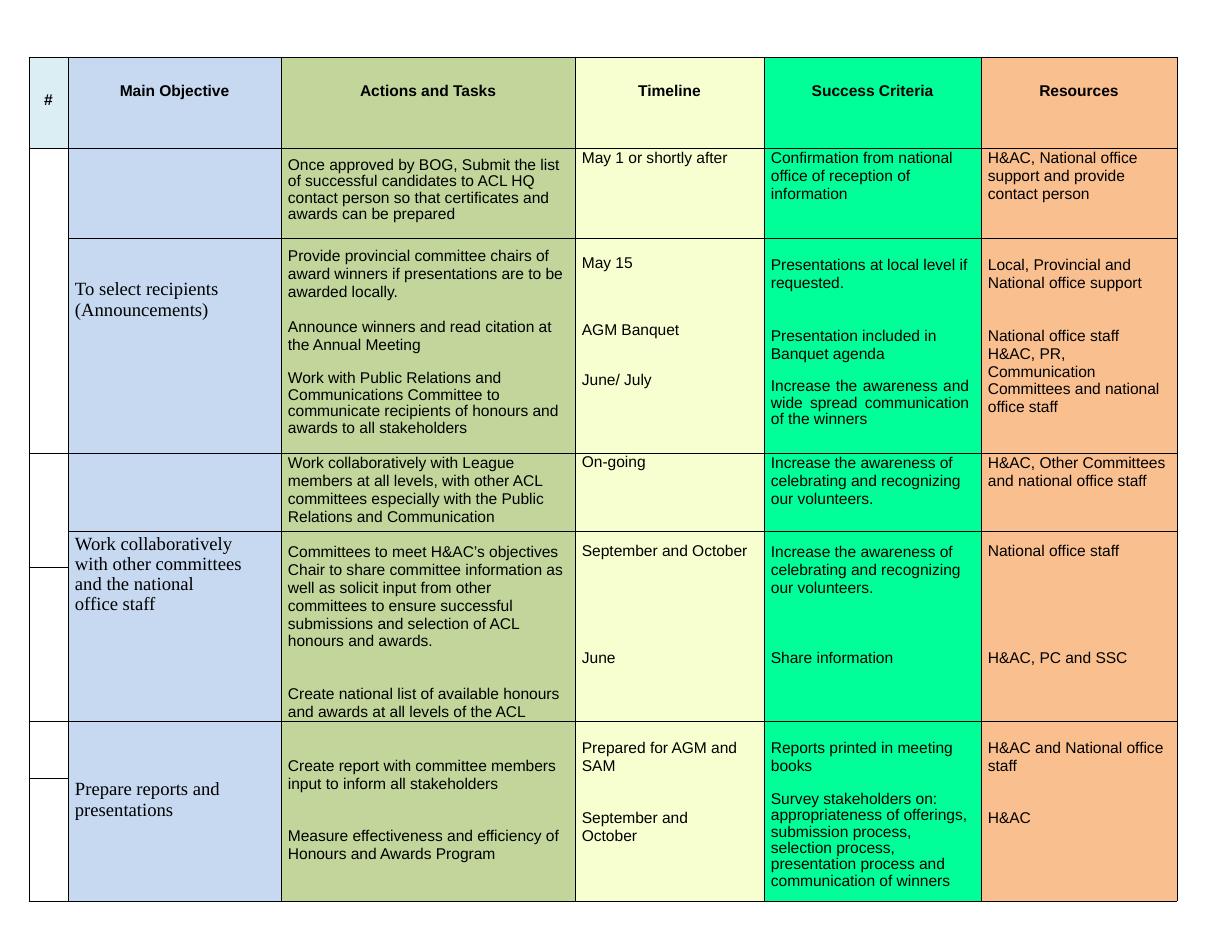
from dataclasses import dataclass
from typing import NamedTuple

from lxml import etree
from pptx import Presentation, util as u
from pptx.dml.color import RGBColor
from pptx.enum import text
from pptx.oxml.ns import qn

PX = u.Inches(1) // 112


def px(length: int) -> u.Emu:
    return u.Emu(length * PX)


@dataclass(frozen=True)
class Theme:
    body_font: str = "Arial"
    objective_font: str = "Times New Roman"
    body_size: float = 10
    objective_size: float = 12
    body_leading: float = 11.5
    objective_leading: float = 13.7
    ink: str = "000000"
    border_width: float = 0.5
    number_head: str = "DAEEF3"


class Column(NamedTuple):
    title: str
    width: int
    fill: str | None
    right: int = 0


class Para(NamedTuple):
    """One paragraph; leading is a share of the line, or None for the fixed one."""
    words: str
    gap: int = 0
    leading: float | None = None
    justified: bool = False


class Entry(NamedTuple):
    row: int
    col: int
    top: int
    paras: tuple[Para, ...]


class Span(NamedTuple):
    row: int
    last_row: int
    cols: tuple[int, ...]


THEME = Theme()
NUMBER, OBJECTIVE, ACTIONS, TIMELINE, CRITERIA, RESOURCES = range(6)
PLAN = tuple(range(OBJECTIVE, RESOURCES + 1))
LEFT, TOP, INDENT = 29, 57, 7
TIGHT = 0.95

COLUMNS = (
    Column("#", 39, None),
    Column("Main Objective", 213, "C6D9F1", 36),
    Column("Actions and Tasks", 294, "C2D69B", 11),
    Column("Timeline", 189, "F7FED0"),
    Column("Success Criteria", 217, "00FF99", 12),
    Column("Resources", 196, "FABF8F", 10),
)
ROW_HEIGHTS = (91, 90, 215, 78, 36, 84, 17, 36, 57, 123)
SPANS = (
    Span(1, 2, (NUMBER,)), Span(3, 4, (NUMBER,)), Span(5, 7, (NUMBER,)),
    Span(4, 5, PLAN), Span(8, 9, PLAN),
)
# Row boundaries inside one objective, drawn only in the number column
OPEN_BOUNDARIES = (6, 7)

AWARENESS = Para("Increase the awareness of celebrating and recognizing our volunteers.")

ENTRIES = (
    Entry(1, ACTIONS, 9, (Para("Once approved by BOG, Submit the list\vof successful candidates to ACL HQ "
                               "contact person so that certificates and awards can be prepared",
                               leading=TIGHT),)),
    Entry(1, TIMELINE, 1, (Para("May 1 or shortly after"),)),
    Entry(1, CRITERIA, 1, (Para("Confirmation from national office of reception of information"),)),
    Entry(1, RESOURCES, 1, (Para("H&AC, National office support and provide contact person"),)),

    Entry(2, OBJECTIVE, 40, (Para("To select recipients (Announcements)"),)),
    Entry(2, ACTIONS, 9, (
        Para("Provide provincial committee chairs of award winners if presentations are to be "
             "awarded locally."),
        Para("Announce winners and read citation at the Annual Meeting", 17),
        Para("Work with Public Relations and Communications Committee to communicate recipients "
             "of honours and awards to all stakeholders", 17, TIGHT))),
    Entry(2, TIMELINE, 16, (Para("May 15"), Para("AGM Banquet", 49), Para("June/ July", 32))),
    Entry(2, CRITERIA, 18, (
        Para("Presentations at local level if requested."),
        Para("Presentation included in Banquet agenda", 35),
        Para("Increase the awareness and wide spread communication of the winners",
             16, TIGHT, True))),
    Entry(2, RESOURCES, 18, (
        Para("Local, Provincial and National office support"),
        Para("National office staff\vH&AC, PR,", 35),
        Para("Communication Committees and national office staff"))),

    Entry(3, ACTIONS, 1, (Para("Work collaboratively with League members at all levels, with other ACL "
                               "committees especially with the Public Relations and Communication"),)),
    Entry(3, TIMELINE, 0, (Para("On-going"),)),
    Entry(3, CRITERIA, 1, (AWARENESS,)),
    Entry(3, RESOURCES, 1, (Para("H&AC, Other Committees and national office staff"),)),

    Entry(4, OBJECTIVE, 4, (Para("Work collaboratively with other committees and the national\voffice staff",
                                 leading=0.96),)),
    Entry(4, ACTIONS, 12, (Para("Committees to meet H&AC’s objectives Chair to share committee information "
                                "as well as solicit input from other committees to ensure successful "
                                "submissions and selection of ACL honours and awards."),)),
    Entry(4, TIMELINE, 11, (Para("September and October"),)),
    Entry(4, CRITERIA, 12, (AWARENESS,)),
    Entry(4, RESOURCES, 11, (Para("National office staff"),)),

    Entry(6, TIMELINE, 0, (Para("June", leading=0.9),)),
    Entry(6, CRITERIA, 0, (Para("Share information", leading=0.9),)),
    Entry(6, RESOURCES, 0, (Para("H&AC, PC and SSC", leading=0.9),)),
    Entry(7, ACTIONS, 0, (Para("Create national list of available honours and awards at all levels "
                               "of the ACL"),)),

    Entry(8, OBJECTIVE, 57, (Para("Prepare reports and presentations"),)),
    Entry(8, ACTIONS, 36, (
        Para("Create report with committee members input to inform all stakeholders"),
        Para("Measure effectiveness and efficiency of Honours and Awards Program", 34))),
    Entry(8, TIMELINE, 18, (Para("Prepared for AGM and SAM"), Para("September and\vOctober", 34))),
    Entry(8, CRITERIA, 18, (
        Para("Reports printed in meeting books"),
        Para("Survey stakeholders on: appropriateness of offerings, submission process, selection "
             "process, presentation process and communication of winners", 16, TIGHT))),
    Entry(8, RESOURCES, 18, (Para("H&AC and National office staff"), Para("H&AC", 34))),
)


def draw_borders(cell, row: int, col: int) -> None:
    """Rule all four edges, leaving out the open boundaries."""
    props = cell._tc.get_or_add_tcPr()
    inside = col != NUMBER
    hidden = {"lnT": inside and row in OPEN_BOUNDARIES,
              "lnB": inside and row + 1 in OPEN_BOUNDARIES}
    for edge in ("lnL", "lnR", "lnT", "lnB"):
        line = etree.SubElement(props, qn(f"a:{edge}"), w=str(u.Pt(THEME.border_width)))
        if hidden.get(edge):
            etree.SubElement(line, qn("a:noFill"))
        else:
            paint = etree.SubElement(line, qn("a:solidFill"))
            etree.SubElement(paint, qn("a:srgbClr"), val=THEME.ink)


def style_cell(cell, row: int, col: int) -> None:
    draw_borders(cell, row, col)
    fill = THEME.number_head if (row, col) == (0, NUMBER) else COLUMNS[col].fill
    if fill:
        cell.fill.solid()
        cell.fill.fore_color.rgb = RGBColor.from_string(fill)
    else:
        cell.fill.background()
    cell.margin_left = cell.margin_right = cell.margin_top = cell.margin_bottom = 0
    # Keeps empty cells from stretching the short rows
    cell.text_frame.paragraphs[0].line_spacing = u.Pt(8)


def write_words(paragraph, words: str, objective: bool, bold: bool) -> None:
    for index, line in enumerate(words.split("\v")):
        if index:
            paragraph.add_line_break()
        run = paragraph.add_run()
        run.text = line
        run.font.name = THEME.objective_font if objective else THEME.body_font
        run.font.size = u.Pt(THEME.objective_size if objective else THEME.body_size)
        run.font.bold = bold
        run.font.color.rgb = RGBColor.from_string(THEME.ink)


def write_entry(cell, entry: Entry) -> None:
    heading = entry.row == 0
    objective = entry.col == OBJECTIVE and not heading
    leading = u.Pt(THEME.objective_leading if objective else THEME.body_leading)
    cell.margin_top = px(entry.top)
    if not heading:
        cell.margin_left, cell.margin_right = px(INDENT), px(COLUMNS[entry.col].right)
    frame = cell.text_frame
    for index, para in enumerate(entry.paras):
        paragraph = frame.add_paragraph() if index else frame.paragraphs[0]
        paragraph.line_spacing = para.leading or leading
        if para.gap:
            paragraph.space_before = px(para.gap)
        if heading:
            paragraph.alignment = text.PP_ALIGN.CENTER
        elif para.justified:
            paragraph.alignment = text.PP_ALIGN.JUSTIFY
        write_words(paragraph, para.words, objective, heading)


def main() -> None:
    deck = Presentation()
    deck.slide_width, deck.slide_height = u.Inches(11), u.Inches(8.5)
    slide = deck.slides.add_slide(deck.slide_layouts[6])
    plan = slide.shapes.add_table(
        len(ROW_HEIGHTS), len(COLUMNS), px(LEFT), px(TOP),
        px(sum(column.width for column in COLUMNS)), px(sum(ROW_HEIGHTS))).table
    plan.first_row = plan.horz_banding = False
    for col, column in enumerate(COLUMNS):
        plan.columns[col].width = px(column.width)
    for row, height in enumerate(ROW_HEIGHTS):
        plan.rows[row].height = px(height)
        for col in range(len(COLUMNS)):
            style_cell(plan.cell(row, col), row, col)
    for span in SPANS:
        for col in span.cols:
            plan.cell(span.row, col).merge(plan.cell(span.last_row, col))
    headings = tuple(Entry(0, col, 34 if col == NUMBER else 25, (Para(column.title),))
                     for col, column in enumerate(COLUMNS))
    for entry in headings + ENTRIES:
        write_entry(plan.cell(entry.row, entry.col), entry)
    deck.save("out.pptx")


if __name__ == "__main__":
    main()
